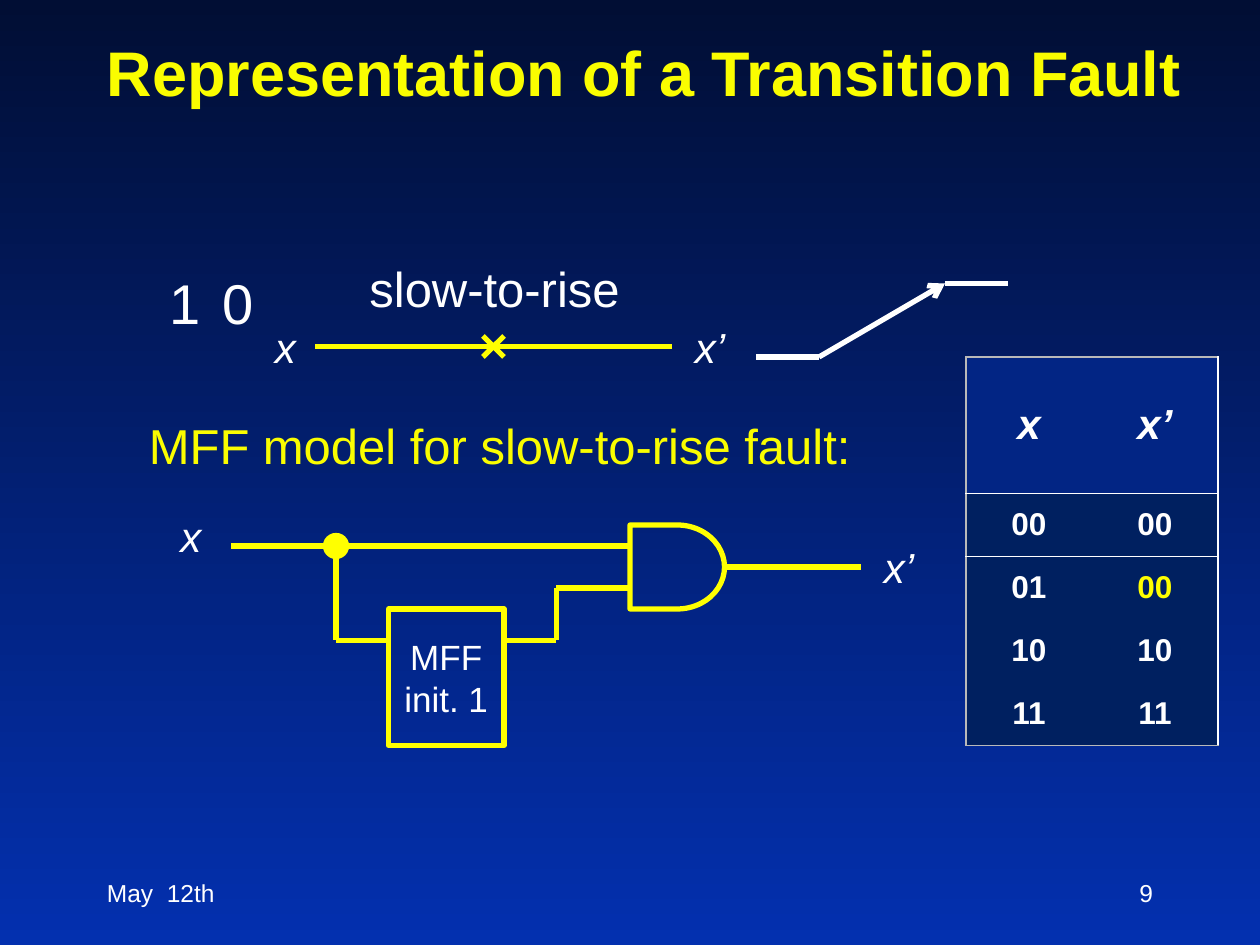
from lxml import etree
from pptx import Presentation
from pptx.dml.color import RGBColor
from pptx.enum import shapes as s, text as t
from pptx.oxml import ns
from pptx.util import Pt

HUE = {"top": "010E34", "base": "0330AF", "title": "FAFD00", "wire": "FFFF00",
       "white": "FFFFFF", "head": "022584", "body": "002060", "edge": "B9B9B9"}
RGB = {name: RGBColor.from_string(code) for name, code in HUE.items()}
LEFT, MID, RIGHT = t.PP_ALIGN.LEFT, t.PP_ALIGN.CENTER, t.PP_ALIGN.RIGHT

deck = Presentation()
deck.slide_width, deck.slide_height = Pt(720), Pt(540)
slide = deck.slides.add_slide(deck.slide_layouts[6])
back = slide.background.fill
back.gradient()
back.gradient_angle = 270
for stop, hue, pos in zip(back.gradient_stops, ("top", "base"), (0, 1)):
    stop.color.rgb, stop.position = RGB[hue], pos


def write(frame, words, size, hue="white", align=LEFT, bold=False, slant=False):
    """Set the words of a text frame and format them."""
    frame.text = words
    para = frame.paragraphs[0]
    para.alignment = align
    font = para.runs[0].font
    font.name, font.size, font.bold, font.italic = "Arial", Pt(size), bold, slant
    font.color.rgb = RGB[hue]


def wire(x1, y1, x2, y2, hue="wire"):
    line = slide.shapes.add_connector(
        s.MSO_CONNECTOR.STRAIGHT, Pt(x1), Pt(y1), Pt(x2), Pt(y2))
    line.line.width = Pt(3)
    line.line.color.rgb = RGB[hue]
    etree.SubElement(line._element.spPr, ns.qn("a:effectLst"))
    return line


# Text: left, top, width, height, words, size, colour, alignment, bold, italic
TOP, CORE, BASE = t.MSO_ANCHOR.TOP, t.MSO_ANCHOR.MIDDLE, t.MSO_ANCHOR.BOTTOM
labels = [
    (54, 18, 642, 48, BASE, "Representation of a Transition Fault", 36, "title", LEFT, True),
    (54, 492, 150, 36, CORE, "May  12th", 14),
    (516, 492, 150, 36, CORE, "9", 14, "white", RIGHT),
    (204, 144, 159, 41, TOP, "slow-to-rise", 28),
    (78, 234, 420, 41, TOP, "MFF model for slow-to-rise fault:", 28, "title"),
    (90, 150, 32, 46, TOP, "1", 32, "white", MID),
    (120, 150, 32, 46, TOP, "0", 32, "white", MID),
]
for x, y, words in ((150, 180, "x"), (390, 180, "x’"), (96, 288, "x"), (498, 306, "x’")):
    labels.append((x, y, 36, 36, TOP, words, 24, "white", LEFT, False, True))
for x, y, wide, high, anchor, *style in labels:
    frame = slide.shapes.add_textbox(Pt(x), Pt(y), Pt(wide), Pt(high)).text_frame
    frame.word_wrap = wide in (36, 642)
    frame.vertical_anchor = anchor
    write(frame, *style)

# Faulty line and its slow rising edge
wire(180, 198, 384, 198)
wire(276, 192, 288, 204)
wire(288, 192, 276, 204)
wire(432, 204, 468, 204, "white")
rise = wire(468, 204, 540, 162, "white")
etree.SubElement(rise.line._get_or_add_ln(), ns.qn("a:tailEnd"), type="arrow")
wire(540, 162, 576, 162, "white")

# Circuit of the fault model
parts = []
for kind, x, y, wide, high in (
        (s.MSO_SHAPE.FLOWCHART_DELAY, 360, 300, 54, 48),
        (s.MSO_SHAPE.RECTANGLE, 222, 348, 66, 78),
        (s.MSO_SHAPE.FLOWCHART_CONNECTOR, 186, 306, 12, 12)):
    part = slide.shapes.add_shape(kind, Pt(x), Pt(y), Pt(wide), Pt(high))
    part.shadow.inherit = False
    part.fill.background()
    part.line.color.rgb = RGB["wire"]
    part.line.width = Pt(3)
    parts.append(part)
gate, block, dot = parts
dot.fill.solid()
dot.fill.fore_color.rgb = RGB["wire"]
block.text_frame.word_wrap = True
block.text_frame.vertical_anchor = CORE
write(block.text_frame, "MFF init. 1", 20, align=MID)

wire(414, 324, 492, 324).begin_connect(gate, 3)
for ends in ((132, 312, 360, 312), (192, 312, 192, 366), (192, 366, 222, 366),
             (288, 366, 318, 366), (318, 366, 318, 336), (318, 336, 360, 336)):
    wire(*ends)

# Truth table
rows = [("x", "x’"), ("00", "00"), ("01", "00"), ("10", "10"), ("11", "11")]
grid = slide.shapes.add_table(5, 2, Pt(552), Pt(204), Pt(144), Pt(222)).table
grid.first_row = grid.horz_banding = False
for r, pair in enumerate(rows):
    grid.rows[r].height = Pt(36 if r else 78)
    for c, words in enumerate(pair):
        cell = grid.cell(r, c)
        cell.margin_left = cell.margin_right = Pt(5)
        cell.margin_top = cell.margin_bottom = 0
        cell.vertical_anchor = CORE
        hue = "wire" if (r, c) == (2, 1) else "white"
        write(cell.text_frame, words, 18 if r else 24, hue, MID, True, r == 0)
        sides = {"lnL": None if c else "edge", "lnR": "white" if c else None,
                 "lnT": ("edge", "white", "white", None, None)[r],
                 "lnB": ("white", "white", None, None, "edge")[r]}
        props = cell._tc.get_or_add_tcPr()
        for side, tint in sides.items():
            wide = Pt(0.75 if tint == "edge" else 1)
            rule = etree.SubElement(props, ns.qn("a:" + side), w=str(wide))
            paint = etree.SubElement(rule, ns.qn("a:solidFill" if tint else "a:noFill"))
            if tint:
                etree.SubElement(paint, ns.qn("a:srgbClr"), val=HUE[tint])
        cell.fill.solid()
        cell.fill.fore_color.rgb = RGB["body" if r else "head"]

deck.save("out.pptx")
